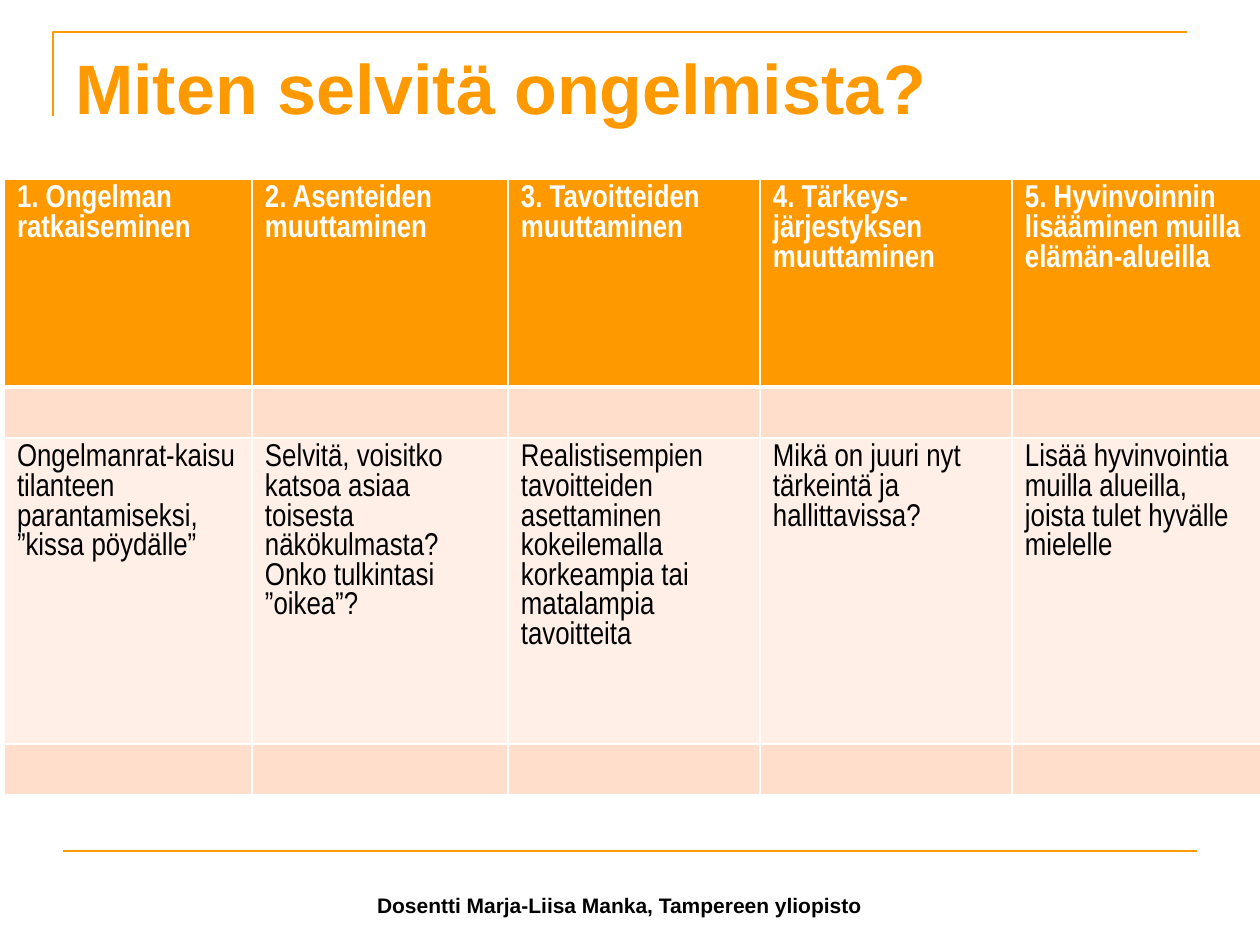
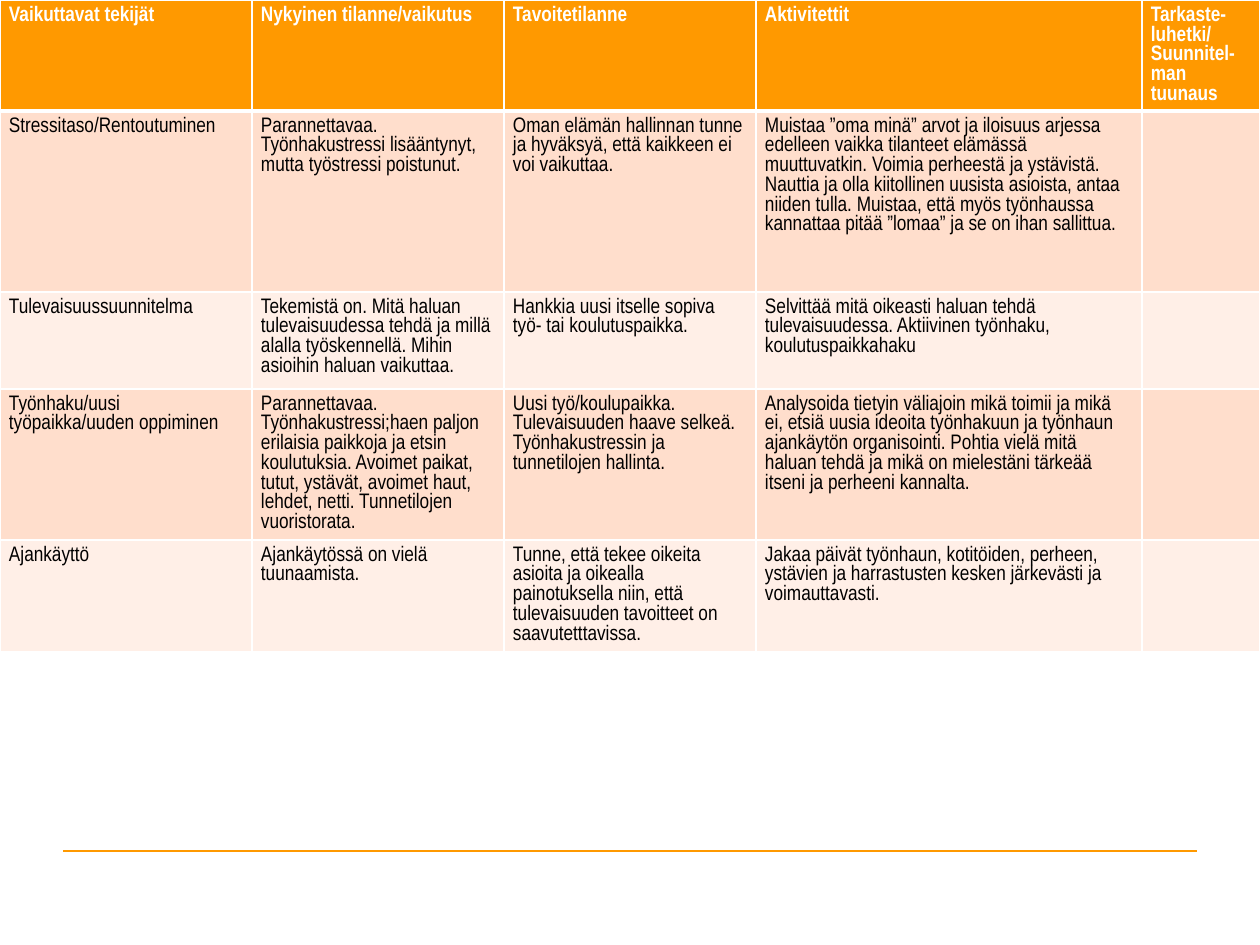
"""Build two slides on solving problems and planning wellbeing."""
from lxml import etree
from pptx import Presentation
from pptx.dml.color import RGBColor
from pptx.enum.shapes import MSO_CONNECTOR as CONN
from pptx.enum.text import MSO_ANCHOR as ANCHOR, PP_ALIGN as ALIGN
from pptx.oxml.ns import qn
from pptx.util import Emu, Pt

SCALE = 914400 / 126
ORANGE, WHITE, BLACK = "FF9900", "FFFFFF", "000000"
BANDS = ["FFDECC", "FFEFE7"]


def px(n):
    return Emu(round(n * SCALE))


def rgb(color):
    return RGBColor.from_string(color)


prs = Presentation()
prs.slide_width, prs.slide_height = px(1260), px(945)

slides = [
    {
        "frame": [(53, 116), (53, 32), (1187, 32)],
        "texts": [
            {"text": "Miten selvitä ongelmista?", "box": (63, 38, 1134, 157),
             "size": 40, "color": ORANGE, "anchor": ANCHOR.TOP, "align": ALIGN.LEFT},
            {"text": "Dosentti Marja-Liisa Manka, Tampereen yliopisto", "box": (302, 861, 635, 63),
             "size": 12, "color": BLACK, "anchor": ANCHOR.BOTTOM, "align": ALIGN.CENTER},
        ],
        "left": 4, "top": 179, "size": 18, "inset": 13,
        "cols": [248, 256, 252, 252, 252],
        "heights": [208, 51, 306, 51],
        "rows": [
            ["1. Ongelman ratkaiseminen", "2. Asenteiden muuttaminen", "3. Tavoitteiden muuttaminen",
             "4. Tärkeys-järjestyksen muuttaminen", "5. Hyvinvoinnin lisääminen muilla elämän-alueilla"],
            [""] * 5,
            ["Ongelmanrat-kaisu tilanteen parantamiseksi, ”kissa pöydälle”",
             "Selvitä, voisitko katsoa asiaa toisesta näkökulmasta? Onko tulkintasi ”oikea”?",
             "Realistisempien tavoitteiden asettaminen kokeilemalla korkeampia tai matalampia tavoitteita",
             "Mikä on juuri nyt tärkeintä ja hallittavissa?",
             "Lisää hyvinvointia muilla alueilla, joista tulet hyvälle mielelle"],
            [""] * 5,
        ],
    },
    {
        "frame": [],
        "texts": [],
        "left": 0, "top": 0, "size": 12, "inset": 9,
        "cols": [252, 252, 252, 386, 118],
        "heights": [111, 181, 97, 151, 112],
        "rows": [
            ["Vaikuttavat tekijät", "Nykyinen tilanne/vaikutus", "Tavoitetilanne", "Aktivitettit",
             "Tarkaste-luhetki/Suunnitel-man tuunaus"],
            ["Stressitaso/Rentoutuminen",
             "Parannettavaa. Työnhakustressi lisääntynyt, mutta työstressi poistunut.",
             "Oman elämän hallinnan tunne ja hyväksyä, että kaikkeen ei voi vaikuttaa.",
             "Muistaa ”oma minä” arvot ja iloisuus arjessa edelleen vaikka tilanteet elämässä "
             "muuttuvatkin. Voimia perheestä ja ystävistä. Nauttia ja olla kiitollinen uusista "
             "asioista, antaa niiden tulla. Muistaa, että myös työnhaussa kannattaa pitää "
             "”lomaa” ja se on ihan sallittua.", ""],
            ["Tulevaisuussuunnitelma",
             "Tekemistä on. Mitä haluan tulevaisuudessa tehdä ja millä alalla työskennellä. "
             "Mihin asioihin haluan vaikuttaa.",
             "Hankkia uusi itselle sopiva työ- tai koulutuspaikka.",
             "Selvittää mitä oikeasti haluan tehdä tulevaisuudessa. Aktiivinen työnhaku, "
             "koulutuspaikkahaku", ""],
            ["Työnhaku/uusi työpaikka/uuden oppiminen",
             "Parannettavaa. Työnhakustressi;haen paljon erilaisia paikkoja ja etsin koulutuksia. "
             "Avoimet paikat, tutut, ystävät, avoimet haut, lehdet, netti. Tunnetilojen vuoristorata.",
             "Uusi työ/koulupaikka. Tulevaisuuden haave selkeä. Työnhakustressin ja "
             "tunnetilojen hallinta.",
             "Analysoida tietyin väliajoin mikä toimii ja mikä ei, etsiä uusia ideoita työnhakuun "
             "ja työnhaun ajankäytön organisointi. Pohtia vielä mitä haluan tehdä ja mikä on "
             "mielestäni tärkeää itseni ja perheeni kannalta.", ""],
            ["Ajankäyttö", "Ajankäytössä on vielä tuunaamista.",
             "Tunne, että tekee oikeita asioita ja oikealla painotuksella niin, että "
             "tulevaisuuden tavoitteet on saavutetttavissa.",
             "Jakaa päivät työnhaun, kotitöiden, perheen, ystävien ja harrastusten kesken "
             "järkevästi ja voimauttavasti.", ""],
        ],
    },
]

for data in slides:
    s = prs.slides.add_slide(prs.slide_layouts[6])

    if data["frame"]:
        start, *points = data["frame"]
        fb = s.shapes.build_freeform(*start, scale=SCALE)
        fb.add_line_segments(points, close=False)
        sp = fb.convert_to_shape()
        sp.shadow.inherit = False
        sp.fill.background()
        sp.line.color.rgb = rgb(ORANGE)
        sp.line.width = Pt(1.5)

    rule = s.shapes.add_connector(CONN.STRAIGHT, px(63), px(851), px(1197), px(851))
    rule.line.color.rgb = rgb(ORANGE)
    rule.line.width = Pt(1.5)
    etree.SubElement(rule._element.spPr, qn("a:effectLst"))

    for item in data["texts"]:
        tf = s.shapes.add_textbox(*map(px, item["box"])).text_frame
        tf.word_wrap = True
        tf.vertical_anchor = item["anchor"]
        p = tf.paragraphs[0]
        p.alignment = item["align"]
        r = p.add_run()
        r.text = item["text"]
        for key, value in {"name": "Arial", "size": Pt(item["size"]), "bold": True}.items():
            setattr(r.font, key, value)
        r.font.color.rgb = rgb(item["color"])

    cols, heights, rows = data["cols"], data["heights"], data["rows"]
    table = s.shapes.add_table(len(rows), len(cols), px(data["left"]), px(data["top"]),
                               px(sum(cols)), px(sum(heights))).table
    for col, width in zip(table.columns, cols):
        col.width = px(width)
    for row, height in zip(table.rows, heights):
        row.height = px(height)

    for i, texts in enumerate(rows):
        header = i == 0
        for j, text in enumerate(texts):
            cell = table.cell(i, j)
            margins = {"margin_left": data["inset"], "margin_right": data["inset"],
                       "margin_top": 6, "margin_bottom": 6}
            for key, value in margins.items():
                setattr(cell, key, px(value))
            tcPr = cell._tc.get_or_add_tcPr()
            for side in "LRTB":
                thick = (header and side == "B") or (i == 1 and side == "T")
                ln = etree.SubElement(tcPr, qn(f"a:ln{side}"), w=str(Pt(3 if thick else 1)))
                fill = etree.SubElement(ln, qn("a:solidFill"))
                etree.SubElement(fill, qn("a:srgbClr"), val=WHITE)
            cell.fill.solid()
            cell.fill.fore_color.rgb = rgb(ORANGE if header else BANDS[(i - 1) % 2])
            if text:
                r = cell.text_frame.paragraphs[0].add_run()
                r.text = text
                for key, value in {"name": "Arial Narrow", "size": Pt(data["size"]), "bold": header}.items():
                    setattr(r.font, key, value)
                r.font.color.rgb = rgb(WHITE if header else BLACK)

prs.save("out.pptx")
